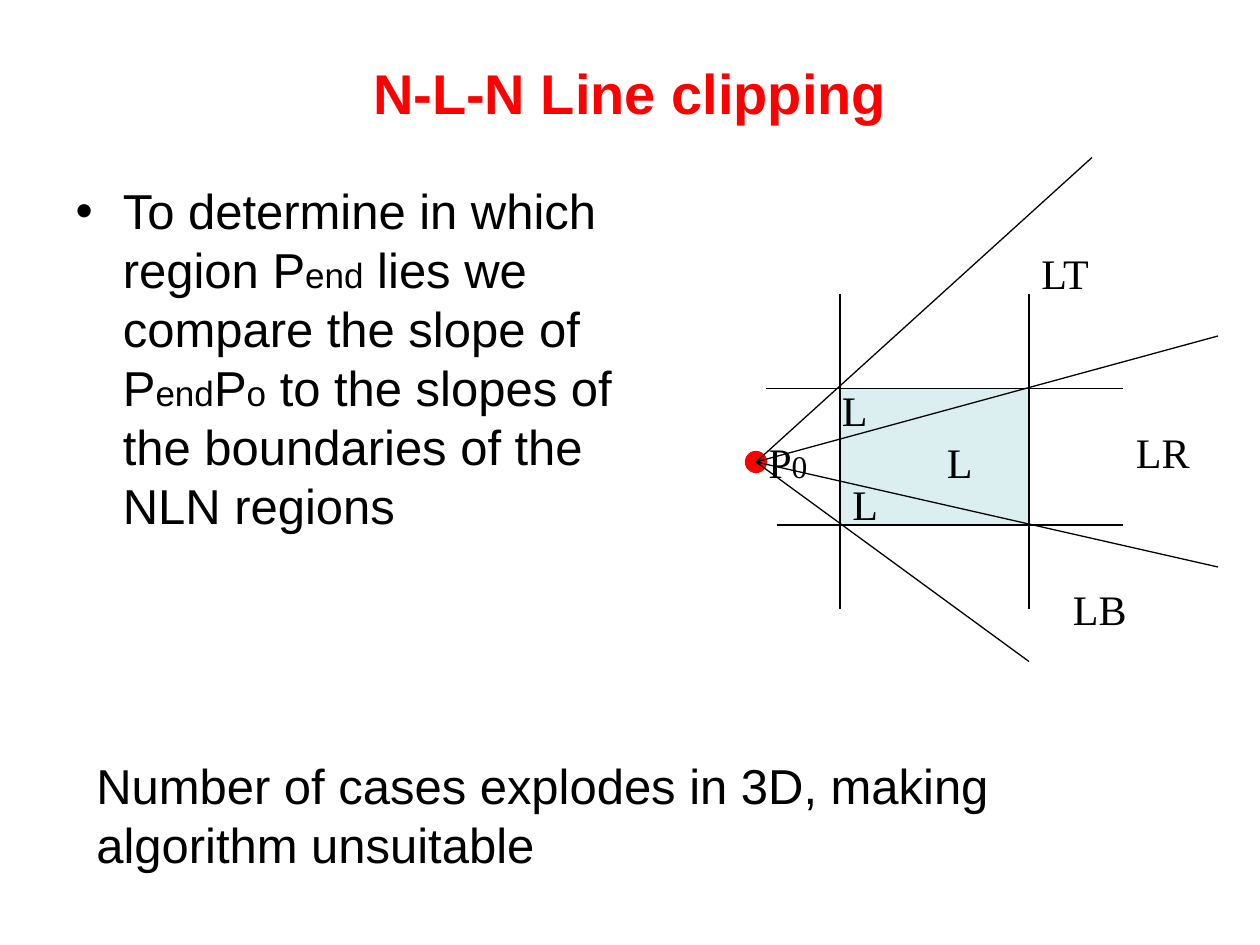
"""Build the N-L-N line clipping slide."""
from dataclasses import dataclass
from typing import NamedTuple

from lxml import etree
from pptx import Presentation
from pptx.dml.color import RGBColor
from pptx.enum.shapes import MSO_CONNECTOR, MSO_SHAPE
from pptx.enum.text import MSO_ANCHOR, MSO_AUTO_SIZE, PP_ALIGN
from pptx.oxml.ns import qn
from pptx.util import Pt

PX = 9525
STRAIGHT = MSO_CONNECTOR.STRAIGHT
RECT, OVAL = MSO_SHAPE.RECTANGLE, MSO_SHAPE.OVAL
MIDDLE, TOP = MSO_ANCHOR.MIDDLE, MSO_ANCHOR.TOP
GROW, FIXED = MSO_AUTO_SIZE.SHAPE_TO_FIT_TEXT, MSO_AUTO_SIZE.NONE
CENTER = PP_ALIGN.CENTER


@dataclass(frozen=True)
class Theme:
    """Colours, fonts and type sizes."""
    ink: RGBColor = RGBColor(0, 0, 0)
    red: RGBColor = RGBColor(255, 0, 0)
    pane: RGBColor = RGBColor(0xBB, 0xE0, 0xE3)
    sans: str = "Arial"
    serif: str = "Times New Roman"
    title: int = 32
    body: int = 28
    sub: int = 20
    label: int = 24
    index: int = 18
    line: float = 0.75


class Box(NamedTuple):
    """A frame in px."""
    x: int
    y: int
    w: int
    h: int


class Dot(NamedTuple):
    """A point in px."""
    x: int
    y: int


class Part(NamedTuple):
    """A piece of text and its size in points."""
    text: str
    size: int


class Label(NamedTuple):
    """A region name and the corner of its frame."""
    text: str
    x: int
    y: int


THEME = Theme()
PANE = Box(640, 296, 144, 104)
RIGHT, BASE = PANE.x + PANE.w, PANE.y + PANE.h
EYE = Dot(576, 352)
EDGES = [
    (Dot(PANE.x, 224), Dot(PANE.x, 464)),
    (Dot(RIGHT, 224), Dot(RIGHT, 464)),
    (Dot(584, PANE.y), Dot(856, PANE.y)),
    (Dot(592, BASE), Dot(856, BASE)),
]
ENDS = [Dot(832, 120), Dot(784, 504), Dot(928, 256), Dot(928, 432)]
LABELS = [
    Label("LR", 856, 320),
    Label("LB", 808, 440),
    Label("LT", 784, 184),
    Label("L", 712, 328),
    Label("L", 640, 360),
    Label("L", 632, 288),
]
BODY = [
    Part("To determine in which region P", THEME.body),
    Part("end", THEME.sub),
    Part(" lies we compare the slope of P", THEME.body),
    Part("end", THEME.sub),
    Part("P", THEME.body),
    Part("o", THEME.sub),
    Part(" to the slopes of the boundaries of the NLN regions", THEME.body),
]
NOTE = "Number of cases explodes in 3D, making algorithm unsuitable"


def scale(box: Box) -> list[int]:
    """Turn a frame into EMU."""
    return [side * PX for side in box]


def place(shape, box: Box) -> None:
    """Move and size a shape."""
    shape.left, shape.top, shape.width, shape.height = scale(box)


def write(shape, parts: list[Part], face: str, color: RGBColor, bold: bool = False) -> None:
    """Fill a shape with one paragraph of sized runs."""
    frame = shape.text_frame
    frame.word_wrap = True
    for part in parts:
        run = frame.paragraphs[0].add_run()
        run.text = part.text
        font = run.font
        font.name, font.size, font.bold = face, Pt(part.size), bold
        font.color.rgb = color


def add_text(slide, box: Box, parts: list[Part], face: str) -> None:
    """Draw a text box that grows with its text."""
    shape = slide.shapes.add_textbox(*scale(box))
    write(shape, parts, face, THEME.ink)
    shape.text_frame.auto_size = GROW


def add_line(slide, start: Dot, end: Dot) -> None:
    """Draw a thin straight line."""
    line = slide.shapes.add_connector(STRAIGHT, *scale(Box(*start, *end)))
    line.line.color.rgb = THEME.ink
    line.line.width = Pt(THEME.line)
    etree.SubElement(line._element.spPr, qn("a:effectLst"))


def add_form(slide, kind: MSO_SHAPE, box: Box, fill: RGBColor, edge: RGBColor):
    """Draw a filled shape with a thin edge."""
    shape = slide.shapes.add_shape(kind, *scale(box))
    shape.shadow.inherit = False
    shape.fill.solid()
    shape.fill.fore_color.rgb = fill
    shape.line.color.rgb = edge
    shape.line.width = Pt(THEME.line)
    return shape


def fade(shape, share: int) -> None:
    """Set the opacity of a solid fill in percent."""
    color = shape._element.spPr.find(qn("a:solidFill"))[0]
    etree.SubElement(color, qn("a:alpha")).set("val", str(share * 1000))


def add_head(slide) -> None:
    """Fill the title and the list."""
    title, body = slide.shapes.title, slide.placeholders[1]
    place(title, Box(48, 29, 864, 82))
    write(title, [Part("N-L-N Line clipping", THEME.title)], THEME.sans, THEME.red, True)
    title.text_frame.vertical_anchor = MIDDLE
    title.text_frame.paragraphs[0].alignment = CENTER
    place(body, Box(48, 133, 447, 409))
    write(body, BODY, THEME.sans, THEME.ink)
    body.text_frame.vertical_anchor = TOP
    for shape in (title, body):
        shape.text_frame.auto_size = FIXED


def add_plot(slide) -> None:
    """Draw the clip window, the rays and the region names."""
    for start, end in EDGES:
        add_line(slide, start, end)
    name = [Part("P", THEME.label), Part("0", THEME.index)]
    add_text(slide, Box(EYE.x, 328, 136, 48), name, THEME.serif)
    add_form(slide, OVAL, Box(EYE.x - 8, EYE.y - 8, 16, 16), THEME.red, THEME.red)
    fade(add_form(slide, RECT, PANE, THEME.pane, THEME.ink), 50)
    for end in ENDS:
        add_line(slide, EYE, end)
    for label in LABELS:
        box = Box(label.x, label.y, 64, 48)
        add_text(slide, box, [Part(label.text, THEME.label)], THEME.serif)


def main() -> None:
    """Build and save the deck."""
    deck = Presentation()
    deck.slide_width, deck.slide_height = 960 * PX, 720 * PX
    slide = deck.slides.add_slide(deck.slide_layouts[1])
    add_head(slide)
    add_plot(slide)
    add_text(slide, Box(64, 571, 802, 99), [Part(NOTE, THEME.body)], THEME.sans)
    deck.save("out.pptx")


if __name__ == "__main__":
    main()
